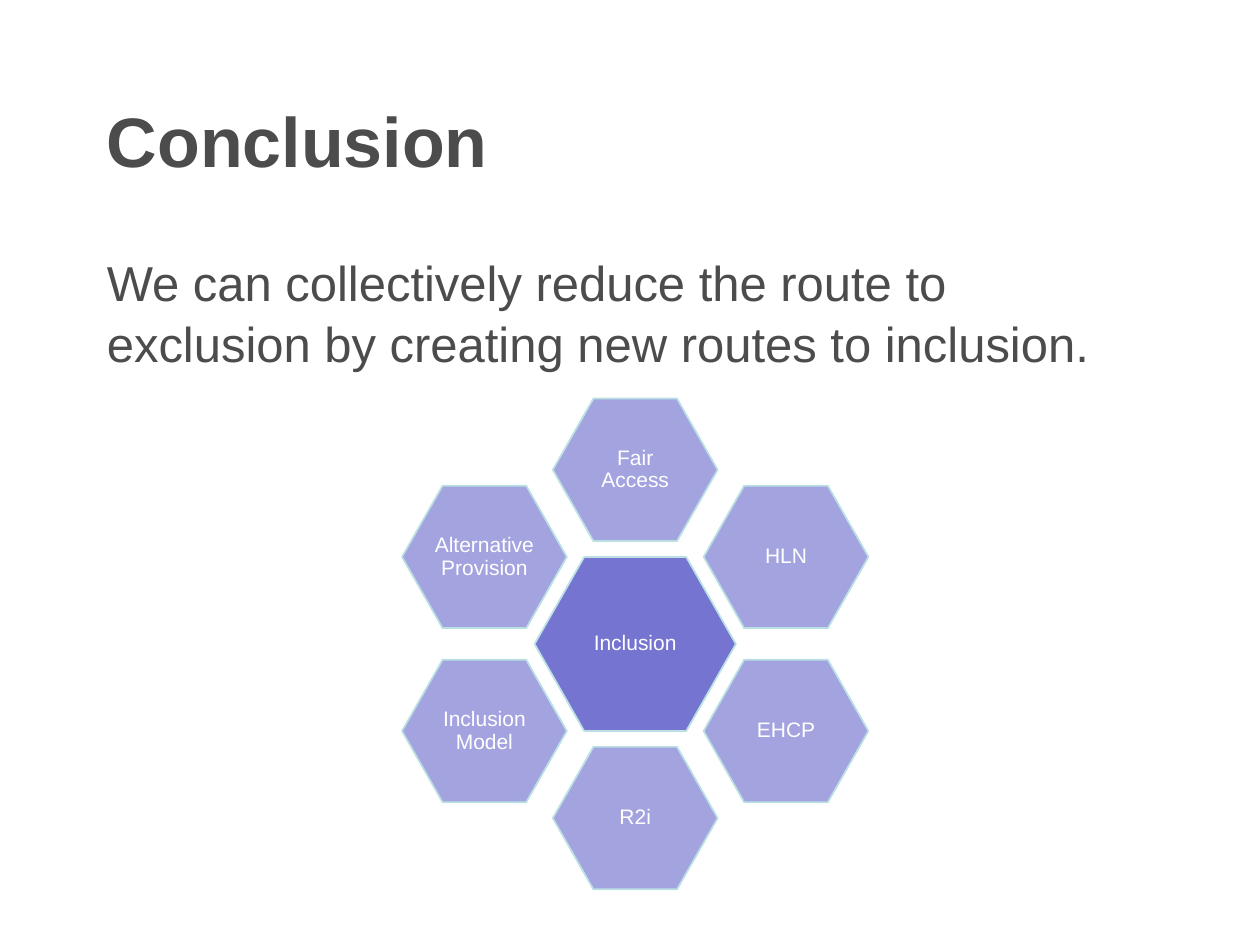
from dataclasses import dataclass
from math import cos, radians, sin

from pptx import Presentation
from pptx.dml.color import RGBColor as Rgb
from pptx.enum.text import MSO_ANCHOR as Anchor, PP_ALIGN as Align
from pptx.util import Pt

COLORS = {
    "text": "4C4C4C",
    "hub": "7575D1",
    "petal": "A3A3E0",
    "outline": "BBE0E3",
    "label": "FFFFFF",
}
HUB_X, HUB_Y = 363, 368
RING_RADIUS = 99.5
CORNER_RATIO = 0.285  # slanted corner width relative to hexagon height


@dataclass
class TextBox:
    text: str
    left: float
    top: float
    width: float
    height: float
    top_inset: float
    size: float
    bold: bool = False


@dataclass
class HexagonStyle:
    width: float
    height: float
    inset_x: float
    inset_y: float
    fill: str


TEXT_BOXES = [
    TextBox("Conclusion", 54, 48.2, 642, 90, 5, 40, True),
    TextBox(
        "We can collectively reduce the route to exclusion by creating "
        "new routes to inclusion.",
        54, 138.2, 618, 101, 4.2, 28,
    ),
]
HUB = HexagonStyle(115, 99.4, 20, 18, "hub")
PETAL = HexagonStyle(94.2, 81.4, 16.5, 14.5, "petal")
# Clockwise from the top
PETAL_LABELS = [
    "Fair Access", "HLN", "EHCP", "R2i", "Inclusion Model", "Alternative Provision",
]


def set_attributes(target: object, values: dict) -> None:
    for name, value in values.items():
        setattr(target, name, value)


def write_text(box, text: str, frame_format: dict, para_format: dict,
               font_format: dict, color: str) -> None:
    set_attributes(box.text_frame, {"word_wrap": True, **frame_format})
    para = box.text_frame.paragraphs[0]
    set_attributes(para, para_format)
    span = para.add_run()
    span.text = text
    set_attributes(span.font, {"name": "Arial", **font_format})
    span.font.color.rgb = Rgb.from_string(COLORS[color])


def draw_text_box(page, item: TextBox) -> None:
    box = page.shapes.add_textbox(
        Pt(item.left), Pt(item.top), Pt(item.width), Pt(item.height))
    write_text(
        box, item.text,
        {"margin_top": Pt(item.top_inset), "vertical_anchor": Anchor.TOP},
        {"alignment": Align.LEFT, "line_spacing": 1.05},
        {"size": Pt(item.size), "bold": item.bold},
        "text",
    )


def draw_hexagon(page, label: str, center_x: float, center_y: float,
                 style: HexagonStyle) -> None:
    half_width, half_height = style.width / 2, style.height / 2
    flat = half_width - CORNER_RATIO * style.height
    corners = [
        (-half_width, 0), (-flat, -half_height), (flat, -half_height),
        (half_width, 0), (flat, half_height), (-flat, half_height),
    ]
    points = [(Pt(center_x + x), Pt(center_y + y)) for x, y in corners]
    builder = page.shapes.build_freeform(*points[0])
    builder.add_line_segments(points[1:], close=True)
    hexagon = builder.convert_to_shape()
    hexagon.shadow.inherit = False
    hexagon.fill.solid()
    hexagon.fill.fore_color.rgb = Rgb.from_string(COLORS[style.fill])
    hexagon.line.color.rgb = Rgb.from_string(COLORS["outline"])
    hexagon.line.width = Pt(1)
    write_text(
        hexagon, label,
        {
            "margin_left": Pt(style.inset_x), "margin_right": Pt(style.inset_x),
            "margin_top": Pt(style.inset_y), "margin_bottom": Pt(style.inset_y),
            "vertical_anchor": Anchor.MIDDLE,
        },
        {"alignment": Align.CENTER, "line_spacing": 0.9},
        {"size": Pt(12)},
        "label",
    )


def main() -> None:
    deck = Presentation()
    set_attributes(deck, {"slide_width": Pt(720), "slide_height": Pt(540)})
    page = deck.slides.add_slide(deck.slide_layouts[6])

    # Heading and statement
    for item in TEXT_BOXES:
        draw_text_box(page, item)

    # Hub with its ring of hexagons
    draw_hexagon(page, "Inclusion", HUB_X, HUB_Y, HUB)
    for index, label in enumerate(PETAL_LABELS):
        angle = radians(index * 360 / len(PETAL_LABELS))
        draw_hexagon(page, label, HUB_X + RING_RADIUS * sin(angle),
                     HUB_Y - RING_RADIUS * cos(angle), PETAL)

    deck.save("out.pptx")


if __name__ == "__main__":
    main()
